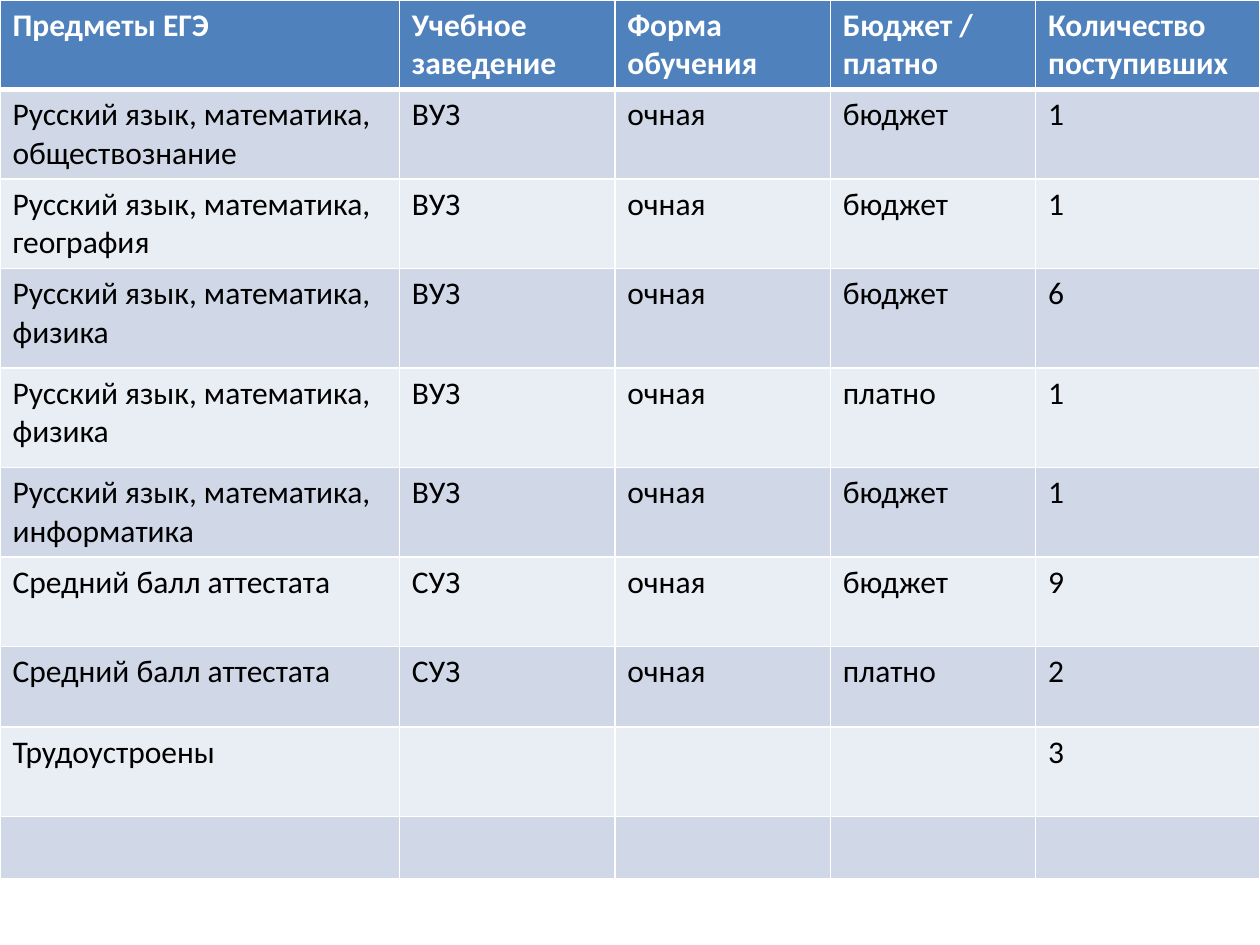
from dataclasses import dataclass

from pptx import Presentation
from pptx.dml.color import RGBColor
from pptx.enum.text import MSO_ANCHOR
from pptx.oxml.ns import qn
from pptx.util import Inches, Pt
from lxml import etree

TOP = MSO_ANCHOR.TOP
BLANK_LAYOUT = 6


@dataclass(frozen=True)
class Theme:
    font: str = "Calibri"
    size: int = 18
    header_fill: str = "4F81BD"
    bands: tuple = ("D0D8E8", "E9EDF4")
    header_text: str = "FFFFFF"
    body_text: str = "000000"
    border: str = "FFFFFF"
    thin: int = 1
    thick: int = 3


HEADER = ("Предметы ЕГЭ", "Учебное заведение", "Форма обучения",
          "Бюджет / платно", "Количество поступивших")
EXAMS = "Русский язык, математика, "
CERTIFICATE = "Средний балл аттестата"
ADMISSIONS = [
    (EXAMS + "обществознание", "ВУЗ", "очная", "бюджет", "1"),
    (EXAMS + "география", "ВУЗ", "очная", "бюджет", "1"),
    (EXAMS + "физика", "ВУЗ", "очная", "бюджет", "6"),
    (EXAMS + "физика", "ВУЗ", "очная", "платно", "1"),
    (EXAMS + "информатика", "ВУЗ", "очная", "бюджет", "1"),
    (CERTIFICATE, "СУЗ", "очная", "бюджет", "9"),
    (CERTIFICATE, "СУЗ", "очная", "платно", "2"),
    ("Трудоустроены", "", "", "", "3"),
    ("",) * 5,
]
COL_WIDTHS = (3.17, 1.71, 1.71, 1.63, 1.78)
ROW_HEIGHTS = (0.71, 0.71, 0.71, 0.79, 0.79, 0.71, 0.71, 0.64, 0.71, 0.49)


class SlideBuilder:
    def __init__(self, slide, theme):
        self.s = slide
        self.theme = theme

    def border(self, cell, side, width):
        ln = etree.SubElement(cell._tc.get_or_add_tcPr(), qn(f"a:ln{side}"),
                              w=str(Pt(width)))
        fill = etree.SubElement(ln, qn("a:solidFill"))
        etree.SubElement(fill, qn("a:srgbClr"), val=self.theme.border)

    def cell(self, cell, text, row):
        t = self.theme
        is_header = row == 0
        # Borders come before the fill in the cell properties
        widths = {"L": t.thin, "R": t.thin,
                  "T": t.thick if row == 1 else t.thin,
                  "B": t.thick if is_header else t.thin}
        for side, width in widths.items():
            self.border(cell, side, width)
        fill = t.header_fill if is_header else t.bands[(row - 1) % 2]
        cell.fill.solid()
        cell.fill.fore_color.rgb = RGBColor.from_string(fill)
        cell.vertical_anchor = TOP

        cell.text = text
        font = cell.text_frame.paragraphs[0].font
        font.name = t.font
        font.size = Pt(t.size)
        font.bold = is_header
        font.color.rgb = RGBColor.from_string(
            t.header_text if is_header else t.body_text)

    def table(self, rows, left, top, col_widths, row_heights):
        frame = self.s.shapes.add_table(
            len(rows), len(col_widths), Inches(left), Inches(top),
            Inches(sum(col_widths)), Inches(sum(row_heights)))
        table = frame.table
        for column, width in zip(table.columns, col_widths):
            column.width = Inches(width)
        for i, (row, height) in enumerate(zip(table.rows, row_heights)):
            row.height = Inches(height)
            for cell, text in zip(row.cells, rows[i]):
                self.cell(cell, text, i)


def main():
    prs = Presentation()
    prs.slide_width = Inches(10)
    prs.slide_height = Inches(7.5)
    s = prs.slides.add_slide(prs.slide_layouts[BLANK_LAYOUT])

    # Admissions table across the full slide width
    builder = SlideBuilder(s, Theme())
    builder.table([HEADER, *ADMISSIONS], 0, 0, COL_WIDTHS, ROW_HEIGHTS)
    prs.save("out.pptx")


if __name__ == "__main__":
    main()
